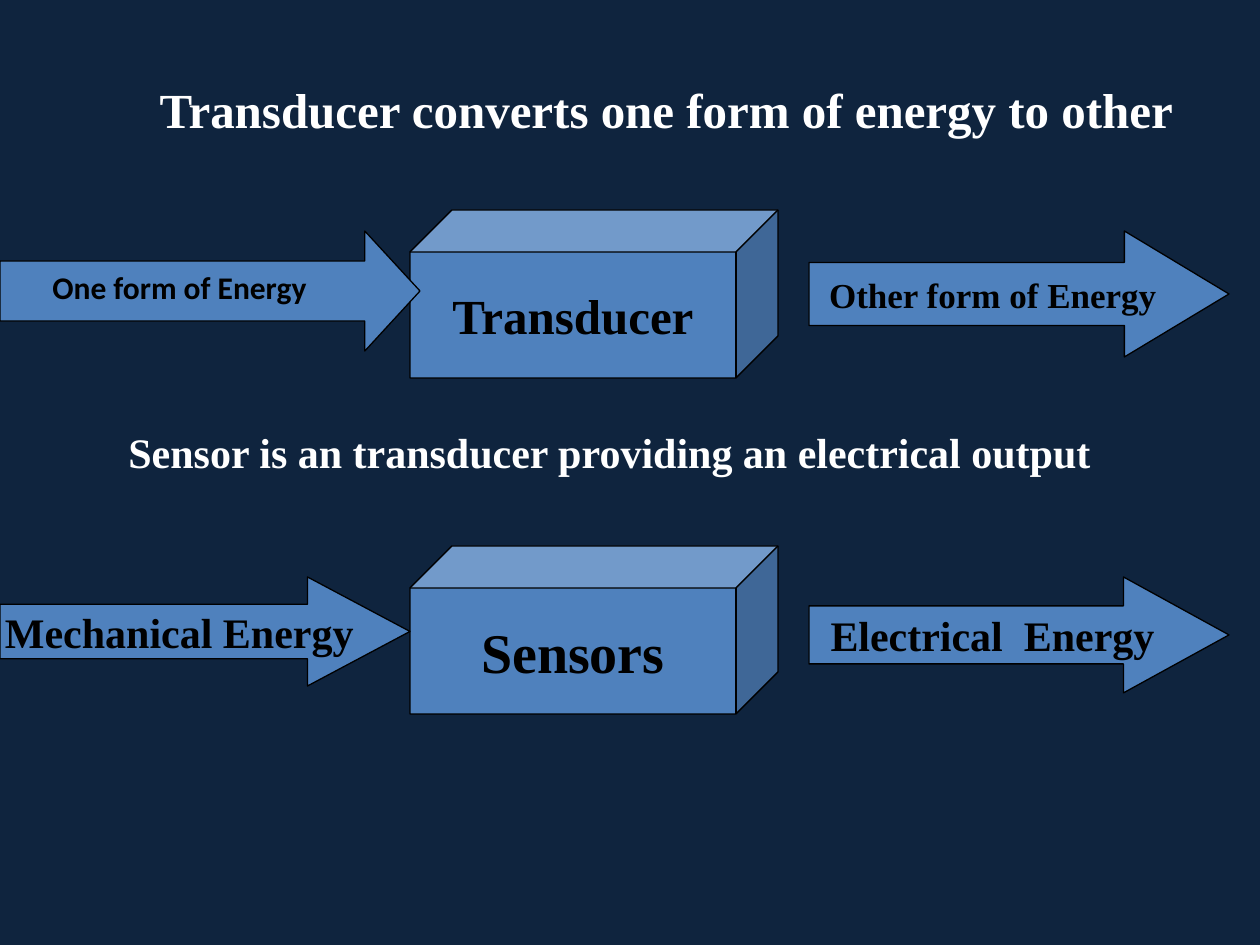
from pptx import Presentation
from pptx import util as u
from pptx.dml.color import RGBColor
from pptx.enum import shapes, text

PX = u.Inches(1) // 126
NAVY = RGBColor(0x0F, 0x24, 0x3E)
BLUE = RGBColor(0x4F, 0x81, 0xBD)
BLACK = RGBColor(0, 0, 0)
WHITE = RGBColor(255, 255, 255)
SERIF = "Times New Roman"
SANS = "Calibri"
CUBE = shapes.MSO_SHAPE.CUBE
ARROW = shapes.MSO_SHAPE.RIGHT_ARROW
MIDDLE = text.MSO_ANCHOR.MIDDLE
TOP = text.MSO_ANCHOR.TOP
GROW = text.MSO_AUTO_SIZE.SHAPE_TO_FIT_TEXT
FIXED = text.MSO_AUTO_SIZE.NONE
CENTER = text.PP_ALIGN.CENTER
LEFT = text.PP_ALIGN.LEFT


def assign(target, values):
    for name, value in values.items():
        setattr(target, name, value)


class Diagram:
    """Holds the style and the current slide; lengths are in px."""

    def __init__(self, deck):
        self.slide = deck.slides.add_slide(deck.slide_layouts[5])
        background = self.slide.background.fill
        background.solid()
        background.fore_color.rgb = NAVY

    def add_words(self, box, words, size, color, font=SERIF, align=LEFT, **frame_format):
        frame = box.text_frame
        assign(frame, frame_format)
        para = frame.paragraphs[0]
        para.alignment = align
        span = para.add_run()
        span.text = words
        assign(span.font, {"name": font, "size": u.Pt(size), "bold": True})
        span.font.color.rgb = color

    def title(self, place, words, size):
        box = self.slide.shapes.title
        assign(box, dict(zip(("left", "top", "width", "height"),
                             (length * PX for length in place))))
        self.add_words(box, words, size, WHITE, word_wrap=False,
                       auto_size=GROW, vertical_anchor=TOP)

    def label(self, place, words, size, color=WHITE, font=SERIF, wrap=False, parent=None):
        parent = parent or self.slide
        box = parent.shapes.add_textbox(*(length * PX for length in place))
        self.add_words(box, words, size, color, font, word_wrap=wrap, auto_size=GROW)

    def block(self, kind, place, adjustments, words=None, size=None, parent=None):
        parent = parent or self.slide
        box = parent.shapes.add_shape(kind, *(length * PX for length in place))
        box.shadow.inherit = False
        box.fill.solid()
        box.fill.fore_color.rgb = BLUE
        box.line.color.rgb = BLACK
        box.line.width = u.Pt(0.75)
        for index, value in enumerate(adjustments):
            box.adjustments[index] = value
        if words:
            self.add_words(box, words, size, BLACK, align=CENTER, word_wrap=False,
                           auto_size=FIXED, vertical_anchor=MIDDLE)

    def captioned_arrow(self, place, adjustments, label_place, words, size):
        """Group an arrow with a separate text box on it."""
        group = self.slide.shapes.add_group_shape()
        self.block(ARROW, place, adjustments, parent=group)
        self.label(label_place, words, size, BLACK, SANS, True, group)


def main():
    deck = Presentation()
    assign(deck, {"slide_width": u.Inches(10), "slide_height": u.Inches(7.5)})
    diagram = Diagram(deck)

    diagram.title((147, 73, 1045, 72),
                  "Transducer converts one form of energy to other", 28)
    diagram.label((116, 420, 990, 63),
                  "Sensor is an transducer providing an electrical output", 24)

    for top, words, size in ((210, "Transducer", 28), (546, "Sensors", 32)):
        diagram.block(CUBE, (410, top, 368, 168), [0.25], words, size)

    for place, head, words, size in (
        ((809, 231, 420, 126), 0.83, "Other form of Energy", 20),
        ((809, 577, 420, 116), 0.91, "Electrical  Energy", 24),
        ((0, 577, 410, 109), 0.94, "Mechanical Energy", 24),
    ):
        diagram.block(ARROW, place, [0.5, head], words, size)

    diagram.captioned_arrow((0, 231, 420, 120), [0.5, 0.46],
                            (40, 262, 331, 50), "One form of Energy", 18)
    deck.save("out.pptx")


if __name__ == "__main__":
    main()
